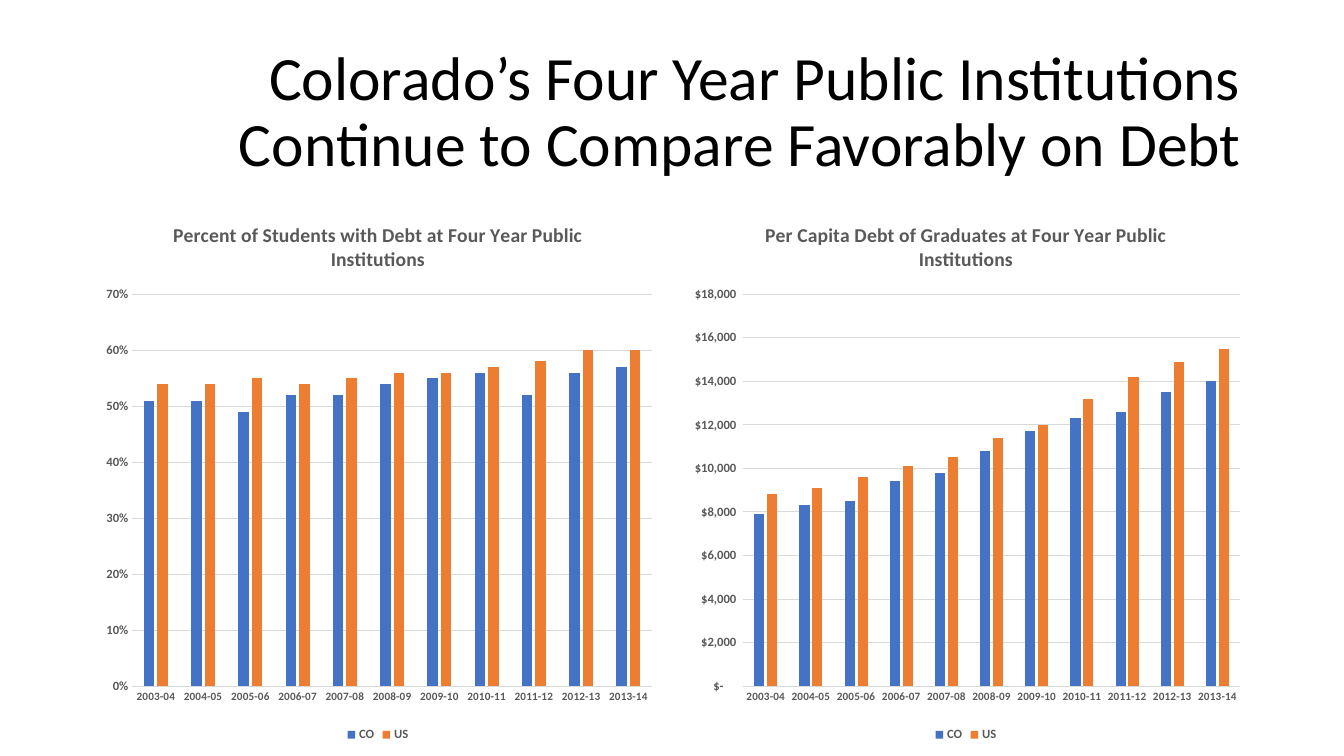
from lxml import etree
from pptx import Presentation
from pptx.chart.data import CategoryChartData
from pptx.dml.color import RGBColor
from pptx.enum.chart import XL_CHART_TYPE as CT, XL_LEGEND_POSITION as LP, XL_TICK_MARK as TM
from pptx.enum.text import MSO_ANCHOR, PP_ALIGN
from pptx.oxml.ns import qn
from pptx.util import Pt

BLACK = RGBColor(0x00, 0x00, 0x00)
GREY = RGBColor(0x59, 0x59, 0x59)
RULE = RGBColor(0xD9, 0xD9, 0xD9)
BLUE = RGBColor(0x44, 0x72, 0xC4)
ORANGE = RGBColor(0xED, 0x7D, 0x31)
FONT = "Calibri"

TITLE = "Colorado’s Four Year Public Institutions Continue to Compare Favorably on Debt"
YEARS = [f"{y}-{(y + 1) % 100:02d}" for y in range(2003, 2014)]
CHARTS = [
    {
        "title": "Percent of Students with Debt at Four Year Public Institutions",
        "CO": [0.51, 0.51, 0.49, 0.52, 0.52, 0.54, 0.55, 0.56, 0.52, 0.56, 0.57],
        "US": [0.54, 0.54, 0.55, 0.54, 0.55, 0.56, 0.56, 0.57, 0.58, 0.6, 0.6],
        "format": "0%", "max": 0.7, "step": 0.1, "plot_x": 0.07,
    },
    {
        "title": "Per Capita Debt of Graduates at Four Year Public Institutions",
        "CO": [7900, 8300, 8500, 9400, 9800, 10800, 11700, 12300, 12600, 13500, 14000],
        "US": [8800, 9100, 9600, 10100, 10500, 11400, 12000, 13200, 14200, 14900, 15500],
        "format": '_("$"* #,##0_);_("$"* \\(#,##0\\);_("$"* "-"??_);_(@_)',
        "max": 18000, "step": 2000, "plot_x": 0.11,
    },
]
LEFT, CHART_TOP, CHART_W, CHART_H, GAP = 66, 144, 408, 389, 12
PLOT_RIGHT, PLOT_Y, PLOT_H = 0.98, 0.17, 0.72


def style_font(font, size, color=GREY, bold=True):
    font.name, font.size, font.bold = FONT, Pt(size), bold
    font.color.rgb = color


def style_line(line, color):
    line.color.rgb = color
    line.width = Pt(0.75)


def place_plot(chart, x):
    area = chart.element.chart.plotArea
    for old in area.findall(qn("c:layout")):
        area.remove(old)
    layout = etree.Element(qn("c:layout"))
    area.insert(0, layout)
    manual = etree.SubElement(layout, qn("c:manualLayout"))
    settings = [("layoutTarget", "inner"), ("xMode", "edge"), ("yMode", "edge"),
                ("x", x), ("y", PLOT_Y), ("w", round(PLOT_RIGHT - x, 2)), ("h", PLOT_H)]
    for name, value in settings:
        etree.SubElement(manual, qn(f"c:{name}")).set("val", str(value))


def add_debt_chart(slide, left, content):
    data = CategoryChartData(number_format=content["format"])
    data.categories = YEARS
    for name in ("CO", "US"):
        data.add_series(name, content[name])
    chart = slide.shapes.add_chart(CT.COLUMN_CLUSTERED, Pt(left), Pt(CHART_TOP),
                                   Pt(CHART_W), Pt(CHART_H), data).chart
    style_font(chart.font, 10, BLACK, False)

    r = chart.chart_title.text_frame.paragraphs[0].add_run()
    r.text = content["title"]
    style_font(r.font, 14)
    chart.chart_title.include_in_layout = False

    chart.has_legend = True
    chart.legend.position = LP.BOTTOM
    chart.legend.include_in_layout = False
    style_font(chart.legend.font, 9)

    plot = chart.plots[0]
    plot.gap_width, plot.overlap, plot.vary_by_categories = 219, -27, False
    for series, color in zip(plot.series, (BLUE, ORANGE)):
        series.format.fill.solid()
        series.format.fill.fore_color.rgb = color
        series.invert_if_negative = False

    years, values = chart.category_axis, chart.value_axis
    for axis, size in ((years, 8), (values, 9)):
        axis.major_tick_mark = axis.minor_tick_mark = TM.NONE
        style_font(axis.tick_labels.font, size)
    style_line(years.format.line, RULE)
    values.format.line.fill.background()
    values.has_major_gridlines = True
    style_line(values.major_gridlines.format.line, RULE)
    values.minimum_scale, values.maximum_scale = 0, content["max"]
    values.major_unit = content["step"]
    values.tick_labels.number_format = content["format"]
    values.tick_labels.number_format_is_linked = False
    place_plot(chart, content["plot_x"])


prs = Presentation()
prs.slide_width, prs.slide_height = Pt(960), Pt(540)
slide = prs.slides.add_slide(prs.slide_layouts[6])

tf = slide.shapes.add_textbox(Pt(LEFT), Pt(28.75), Pt(828), Pt(104.4)).text_frame
tf.word_wrap = True
tf.vertical_anchor = MSO_ANCHOR.MIDDLE
p = tf.paragraphs[0]
p.alignment, p.line_spacing = PP_ALIGN.RIGHT, 0.9
r = p.add_run()
r.text = TITLE
style_font(r.font, 44, BLACK, False)

for i, content in enumerate(CHARTS):
    add_debt_chart(slide, LEFT + i * (CHART_W + GAP), content)

prs.save("out.pptx")
